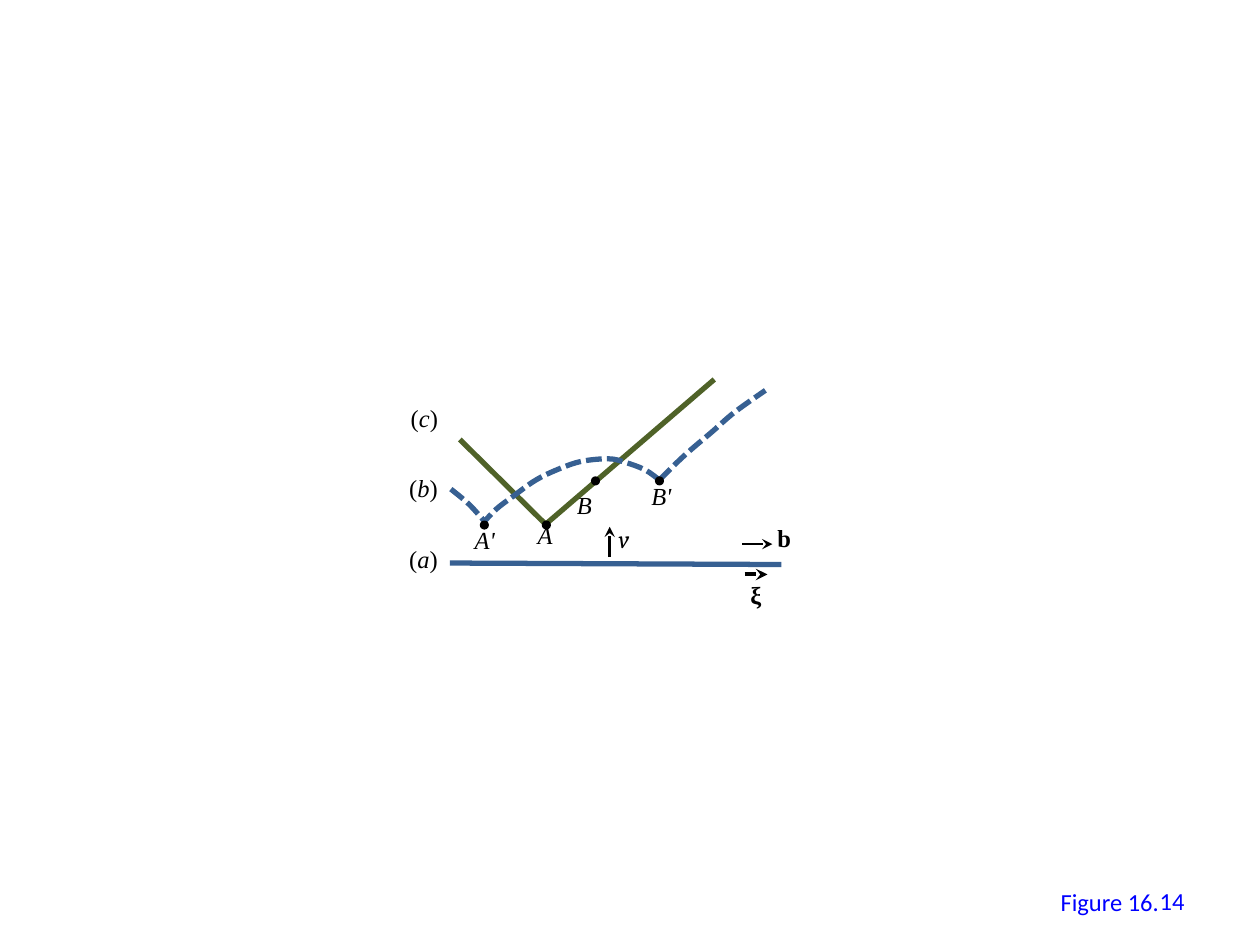
from itertools import groupby

from pptx import Presentation
from pptx.dml.color import RGBColor
from pptx.enum.dml import MSO_LINE
from pptx.enum.shapes import MSO_CONNECTOR, MSO_SHAPE
from pptx.enum.text import MSO_ANCHOR, MSO_AUTO_SIZE, PP_ALIGN
from pptx.oxml.ns import qn
from pptx.util import Cm, Pt
from lxml import etree

STRAIGHT = MSO_CONNECTOR.STRAIGHT
OVAL = MSO_SHAPE.OVAL
DASH = MSO_LINE.SQUARE_DOT
MIDDLE = MSO_ANCHOR.MIDDLE
FIT = MSO_AUTO_SIZE.SHAPE_TO_FIT_TEXT
RIGHT = PP_ALIGN.RIGHT

COLORS = {"black": "000000", "green": "4F6228", "blue": "376092", "link": "0000FF"}
SERIF = "Times New Roman"
SANS = "Calibri"
MATH = "Cambria"


def rgb(name):
    return RGBColor.from_string(COLORS[name])


def ink(line, color, width):
    line.color.rgb = rgb(color)
    line.width = Pt(width)


def text(slide, words, x, y, w, h=0.86, font=SERIF, color="black",
         italic=False, bold=False, align=None, anchor=None, wrap=False):
    """Add one line of text; brackets stay upright in italic labels."""
    box = slide.shapes.add_textbox(Cm(x), Cm(y), Cm(w), Cm(h))
    frame = box.text_frame
    frame.word_wrap = wrap
    if not wrap:
        frame.auto_size = FIT
    if anchor is not None:
        frame.vertical_anchor = anchor
    para = frame.paragraphs[0]
    if align is not None:
        para.alignment = align
    for upright, chars in groupby(words, lambda char: char in "()"):
        run = para.add_run()
        run.text = "".join(chars)
        run.font.name = font
        run.font.size = Pt(14)
        run.font.bold = bold
        run.font.italic = italic and not upright
        run.font.color.rgb = rgb(color)


def line(slide, x1, y1, x2, y2, color="black", width=1.5, arrow=True):
    link = slide.shapes.add_connector(STRAIGHT, Cm(x1), Cm(y1), Cm(x2), Cm(y2))
    ink(link.line, color, width)
    if arrow:
        etree.SubElement(link.line._get_or_add_ln(), qn("a:tailEnd"), type="stealth")
    etree.SubElement(link._element.spPr, qn("a:effectLst"))


def trace(slide, knots, color):
    """Draw an open outline through the knots."""
    points = [(Cm(x), Cm(y)) for x, y in knots]
    build = slide.shapes.build_freeform(*points[0])
    build.add_line_segments(points[1:], close=False)
    shape = build.convert_to_shape()
    shape.shadow.inherit = False
    shape.fill.background()
    ink(shape.line, color, 3)
    return shape


def curve(slide, knots):
    """Draw a dashed outline, its segments bent into a smooth spline."""
    shape = trace(slide, knots, "blue")
    shape.line.dash_style = DASH
    spots = [(int(pt.get("x")), int(pt.get("y")))
             for pt in shape._element.iter(qn("a:pt"))]
    ends = [spots[0]] + spots + [spots[-1]]
    segs = list(shape._element.iter(qn("a:lnTo")))
    for seg, p, a, b, n in zip(segs, ends, ends[1:], ends[2:], ends[3:]):
        bend = etree.Element(qn("a:cubicBezTo"))
        first = [u + (w - v) / 6 for u, v, w in zip(a, p, b)]
        second = [u - (w - v) / 6 for u, v, w in zip(b, a, n)]
        for x, y in (first, second, b):
            etree.SubElement(bend, qn("a:pt"), x=str(round(x)), y=str(round(y)))
        seg.getparent().replace(seg, bend)


def dot(slide, x, y, size=0.13):
    mark = slide.shapes.add_shape(OVAL, Cm(x), Cm(y), Cm(size), Cm(size))
    mark.shadow.inherit = False
    mark.fill.solid()
    mark.fill.fore_color.rgb = rgb("black")
    ink(mark.line, "black", 1.5)


def main():
    deck = Presentation()
    deck.slide_width, deck.slide_height = Cm(25.4), Cm(19.05)
    slide = deck.slides.add_slide(deck.slide_layouts[6])

    # Fronts: sharp (c), then the cusped pieces of (b)
    trace(slide, [(9.27, 8.86), (11, 10.57), (14.4, 7.65)], "green")
    curve(slide, [(9.09, 9.86), (9.45, 10.16), (9.75, 10.49)])
    curve(slide, [(13.3, 9.68), (13, 9.47), (12.6, 9.32), (12.27, 9.25),
                  (11.73, 9.3), (11.28, 9.45), (10.8, 9.68), (10.34, 10.01),
                  (10.01, 10.26), (9.76, 10.52)])
    curve(slide, [(13.29, 9.68), (13.79, 9.19), (14.35, 8.71),
                  (14.81, 8.31), (15.43, 7.87)])

    # Points on two levels
    for x, y in ((9.7, 10.52), (10.95, 10.52), (13.23, 9.63), (11.94, 9.63)):
        dot(slide, x, y)

    # Base line (a) and direction arrows
    line(slide, 9.07, 11.35, 15.75, 11.38, color="blue", width=3, arrow=False)
    line(slide, 12.29, 11.23, 12.29, 10.62)
    line(slide, 15.01, 11.58, 15.47, 11.58, width=2.25)
    line(slide, 14.96, 10.97, 15.57, 10.97)

    # Italic labels of points and fronts
    for words, x, y, w in (
        ("A'", 9.32, 10.46, 1.09), ("B'", 12.88, 9.58, 1.09),
        ("B", 11.38, 9.75, 0.97), ("A", 10.59, 10.36, 0.97),
        ("(a)", 8, 10.85, 1.09), ("(b)", 8, 9.42, 1.09), ("(c)", 8.03, 8, 1.07),
    ):
        text(slide, words, x, y, w, italic=True)

    # Labels of the arrows
    text(slide, "v", 12.22, 10.44, 0.89, font=MATH, italic=True)
    text(slide, "b", 15.42, 10.41, 0.79, bold=True)
    text(slide, "ξ", 14.88, 11.56, 0.76, bold=True)

    # Figure number
    text(slide, "Figure 16.", 21.13, 17.75, 2.51, font=SANS, color="link")
    text(slide, "14", 18.21, 17.65, 5.92, 1.02, font=SANS, color="link",
         align=RIGHT, anchor=MIDDLE, wrap=True)

    deck.save("out.pptx")


if __name__ == "__main__":
    main()
